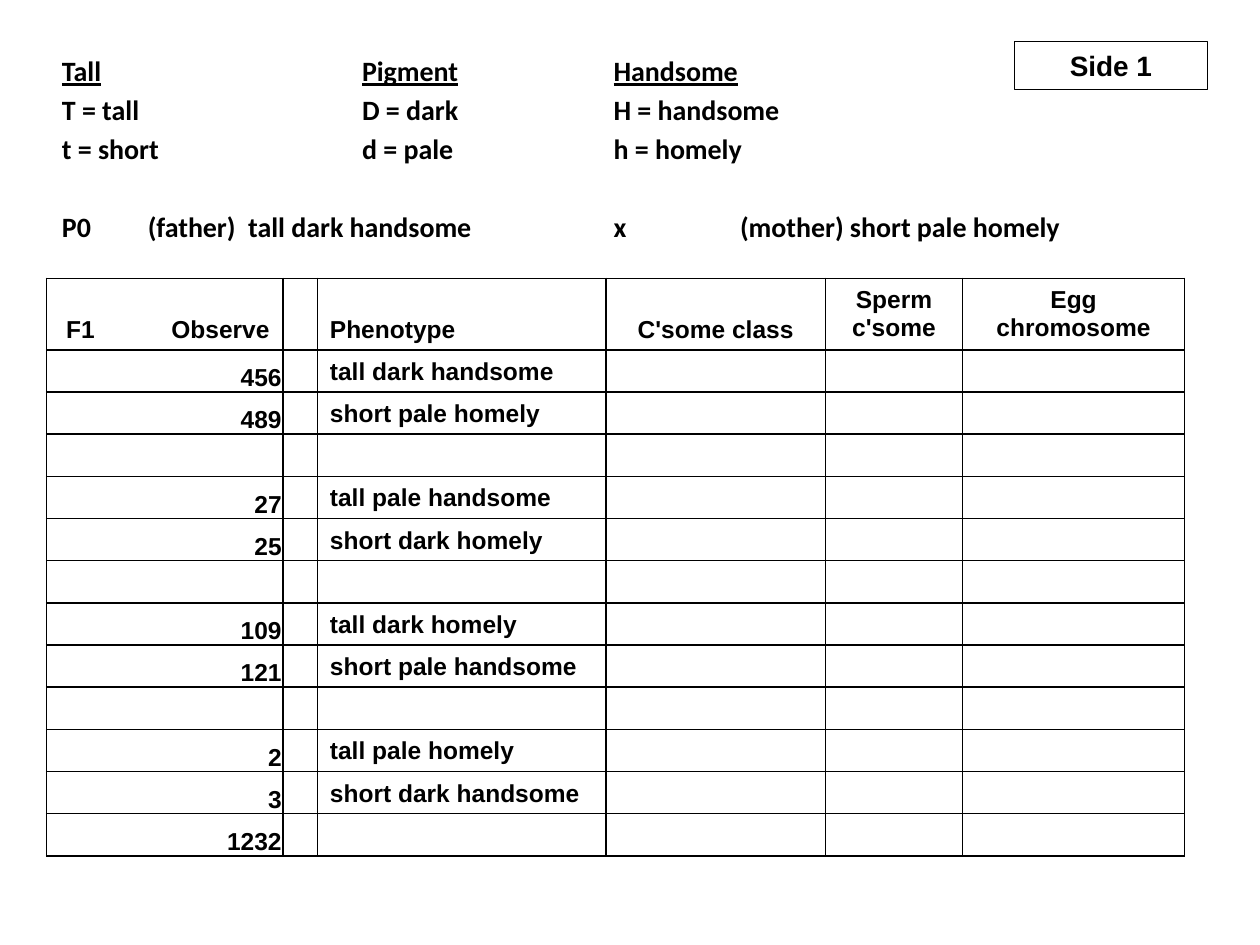
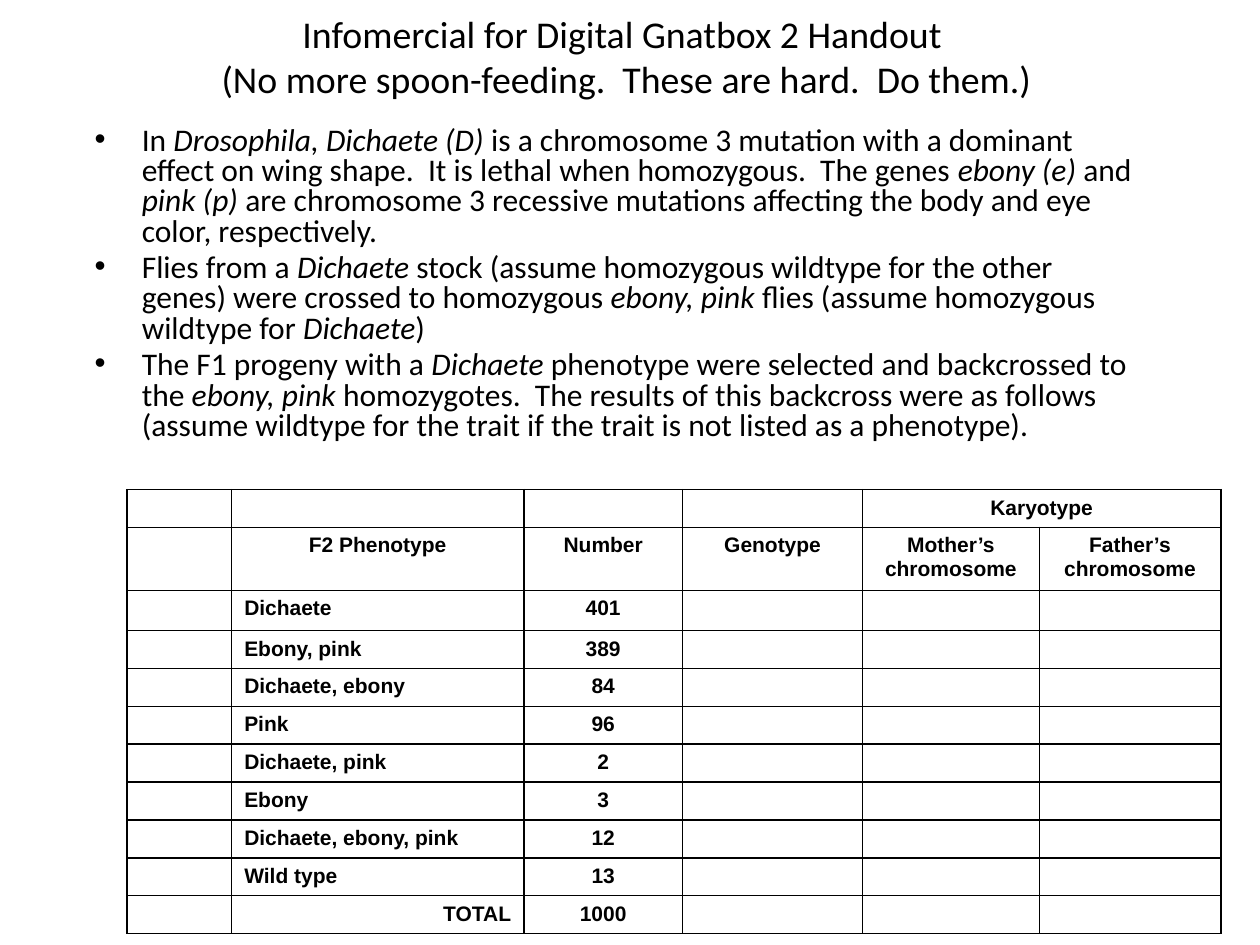
from lxml.etree import SubElement
from pptx import Presentation
from pptx.dml.color import RGBColor
from pptx.enum.shapes import MSO_SHAPE
from pptx.enum.text import MSO_ANCHOR, PP_ALIGN
from pptx.oxml.ns import qn
from pptx.util import Cm, Pt

COLORS = {"ink": "000000", "paper": "FFFFFF"}
BODY_FONT, GRID_FONT = "Calibri", "Arial"
LEFT, CENTER, RIGHT = PP_ALIGN.LEFT, PP_ALIGN.CENTER, PP_ALIGN.RIGHT

TRAITS = ["Tall\tPigment\tHandsome",
          "T = tall\tD = dark\tH = handsome",
          "t = short\td = pale\th = homely"]
PARENTS = "P0\t(father)  tall dark handsome\tx\t(mother) short pale homely"

F1_HEADER = [" F1", "Observe", "", "Phenotype", "C'some class",
             "Sperm c'some", "Egg chromosome"]
F1_COUNTS = [("456", "tall dark handsome"), ("489", "short pale homely"), ("", ""),
             ("27", "tall pale handsome"), ("25", "short dark homely"), ("", ""),
             ("109", "tall dark homely"), ("121", "short pale handsome"), ("", ""),
             ("2", "tall pale homely"), ("3", "short dark handsome"), ("1232", "")]

F2_HEADER = ["", "F2 Phenotype", "Number", "Genotype",
             "Mother’s chromosome", "Father’s chromosome"]
F2_COUNTS = [("Dichaete", "401"), ("Ebony, pink", "389"), ("Dichaete, ebony", "84"),
             ("Pink", "96"), ("Dichaete, pink", "2"), ("Ebony", "3"),
             ("Dichaete, ebony, pink", "12"), ("Wild type", "13"), ("TOTAL", "1000")]

# Asterisks enclose italic gene names.
CROSS_NOTES = [
    "In *Drosophila, Dichaete (D)* is a chromosome 3 mutation with a dominant effect on "
    "wing shape.  It is lethal when homozygous.  The genes *ebony (e)* and *pink (p)* are "
    "chromosome 3 recessive mutations affecting the body and eye color, respectively.",
    "Flies from a *Dichaete* stock (assume homozygous wildtype for the other genes) were "
    "crossed to homozygous *ebony, pink *flies (assume homozygous wildtype for *Dichaete*)",
    "The F1 progeny with a *Dichaete* phenotype were selected and backcrossed to the "
    "*ebony, pink* homozygotes.  The results of this backcross were as follows (assume "
    "wildtype for the trait if the trait is not listed as a phenotype)."]


def set_font(paragraph, name, size, bold=False):
    font = paragraph.font
    font.name, font.size, font.bold = name, Pt(size), bold
    font.color.rgb = RGBColor.from_string(COLORS["ink"])


def add_text_frame(slide, box, anchor=MSO_ANCHOR.TOP):
    frame = slide.shapes.add_textbox(*map(Cm, box)).text_frame
    frame.word_wrap = True
    frame.vertical_anchor = anchor
    return frame


def add_paragraph(frame, index):
    return frame.add_paragraph() if index else frame.paragraphs[0]


def set_tabs(paragraph, stops):
    """Put left tab stops, in cm from the text edge, on a paragraph."""
    properties = paragraph._p.get_or_add_pPr()
    tab_list = SubElement(properties, qn("a:tabLst"))
    for stop in stops:
        SubElement(tab_list, qn("a:tab"), pos=str(Cm(stop)), algn="l")


def set_bullet(paragraph, indent):
    properties = paragraph._p.get_or_add_pPr()
    properties.set("marL", str(Cm(indent)))
    properties.set("indent", str(-Cm(indent)))
    SubElement(properties, qn("a:buFont"), typeface="Arial")
    SubElement(properties, qn("a:buChar"), char="•")


def set_borders(cell, open_sides=""):
    """Rule every side of a cell, except the open ones (letters of LRTB)."""
    properties = cell._tc.get_or_add_tcPr()
    for side in "LRTB":
        line = SubElement(properties, qn(f"a:ln{side}"), w=str(Pt(1)))
        if side in open_sides:
            SubElement(line, qn("a:noFill"))
        else:
            fill = SubElement(line, qn("a:solidFill"))
            SubElement(fill, qn("a:srgbClr"), val=COLORS["ink"])


def add_grid(slide, corner, widths, heights, rows, size, align_at, open_sides=None):
    """Add a ruled table; align_at(row, column) gives each cell's alignment."""
    table = slide.shapes.add_table(
        len(heights), len(widths), *map(Cm, corner),
        Cm(sum(widths)), Cm(sum(heights))).table
    table.first_row = table.horz_banding = False
    for column, width in zip(table.columns, widths):
        column.width = Cm(width)
    for row, height in zip(table.rows, heights):
        row.height = Cm(height)
    for r, texts in enumerate(rows):
        for c, text in enumerate(texts):
            cell = table.cell(r, c)
            set_borders(cell, (open_sides or {}).get(c, ""))
            cell.fill.background()
            paragraph = cell.text_frame.paragraphs[0]
            paragraph.alignment = align_at(r, c)
            set_font(paragraph, GRID_FONT, size, bold=True)
            if text:
                paragraph.text = text
            else:
                empty_font = SubElement(paragraph._p, qn("a:endParaRPr"), sz=str(size * 100))
                SubElement(empty_font, qn("a:latin"), typeface=GRID_FONT)
    return table


def add_trait_key(slide, box):
    frame = add_text_frame(slide, box)
    for index, line in enumerate(TRAITS + [PARENTS]):
        paragraph = add_paragraph(frame, index)
        paragraph.text = line
        is_cross = line == PARENTS
        paragraph.space_before = Pt(25.5 if is_cross else 3)
        set_tabs(paragraph, (1.73, 11.12, 13.67) if is_cross else (6.05, 11.12))
        set_font(paragraph, BODY_FONT, 16, bold=True)
        paragraph.font.underline = index == 0


def add_side_label(slide, box):
    label = slide.shapes.add_shape(MSO_SHAPE.RECTANGLE, *map(Cm, box))
    label.shadow.inherit = False
    label.fill.background()
    label.line.color.rgb = RGBColor.from_string(COLORS["ink"])
    label.line.width = Pt(0.75)
    paragraph = label.text_frame.paragraphs[0]
    paragraph.text = "Side 1"
    paragraph.alignment = CENTER
    set_font(paragraph, GRID_FONT, 16, bold=True)


def add_f1_table(slide, corner):
    def align_at(row, column):
        if row == 0:
            return CENTER if column > 3 else LEFT
        return RIGHT if column == 1 else LEFT

    rows = [F1_HEADER] + [["", count, "", phenotype, "", "", ""]
                          for count, phenotype in F1_COUNTS]
    table = add_grid(slide, corner, [2.26, 2.51, 0.69, 5.82, 4.42, 2.77, 4.47],
                     [1.44] + [0.85] * len(F1_COUNTS), rows, 14, align_at,
                     open_sides={0: "R", 1: "L"})
    for r in range(len(rows)):
        for c in range(len(F1_HEADER)):
            in_middle = r == 0 and c > 4
            table.cell(r, c).vertical_anchor = (
                MSO_ANCHOR.MIDDLE if in_middle else MSO_ANCHOR.BOTTOM)
        if r:
            count = table.cell(r, 1)
            count.margin_left = count.margin_right = count.margin_top = Cm(0.03)
            count.margin_bottom = 0


def add_title(slide, box):
    paragraph = add_text_frame(slide, box, MSO_ANCHOR.MIDDLE).paragraphs[0]
    paragraph.text = ("Infomercial for Digital Gnatbox 2 Handout \v"
                      "(No more spoon-feeding.  These are hard.  Do them.)")
    paragraph.alignment = CENTER
    set_font(paragraph, BODY_FONT, 21.6)


def add_cross_notes(slide, box):
    frame = add_text_frame(slide, box)
    for index, note in enumerate(CROSS_NOTES):
        paragraph = add_paragraph(frame, index)
        paragraph.line_spacing = 0.8
        paragraph.space_before = Pt(3.6)
        set_bullet(paragraph, 0.95)
        set_font(paragraph, BODY_FONT, 18)
        for part, text in enumerate(note.split("*")):
            if text:
                run = paragraph.add_run()
                run.text = text
                run.font.italic = part % 2 == 1


def add_f2_table(slide, corner):
    rows = [["", "", "", "", "Karyotype", ""], F2_HEADER]
    rows += [["", phenotype, number, "", "", ""] for phenotype, number in F2_COUNTS]

    def align_at(row, column):
        if row < 2 or column != 1:
            return CENTER
        return RIGHT if row == len(rows) - 1 else LEFT

    heights = [0.73, 1.21, 0.81] + [0.73] * (len(F2_COUNTS) - 1)
    table = add_grid(slide, corner, [2.11, 5.89, 3.2, 3.63, 3.56, 3.66],
                     heights, rows, 12, align_at)
    table.cell(0, 4).merge(table.cell(0, 5))


def add_slide(deck):
    slide = deck.slides.add_slide(deck.slide_layouts[6])
    slide.background.fill.solid()
    slide.background.fill.fore_color.rgb = RGBColor.from_string(COLORS["paper"])
    return slide


def build_f1_slide(deck):
    slide = add_slide(deck)
    add_trait_key(slide, (1, 0.96, 23.7, 4.5))
    add_side_label(slide, (20.45, 0.84, 3.89, 0.97))
    add_f1_table(slide, (0.94, 5.61))


def build_f2_slide(deck):
    slide = add_slide(deck)
    add_title(slide, (1.83, 0, 21.6, 2.26))
    add_cross_notes(slide, (1.66, 2.44, 21.6, 7.5))
    add_f2_table(slide, (2.56, 9.87))


def main():
    deck = Presentation()
    deck.slide_width, deck.slide_height = Cm(25.4), Cm(19.05)
    build_f1_slide(deck)
    build_f2_slide(deck)
    deck.save("out.pptx")


if __name__ == "__main__":
    main()
